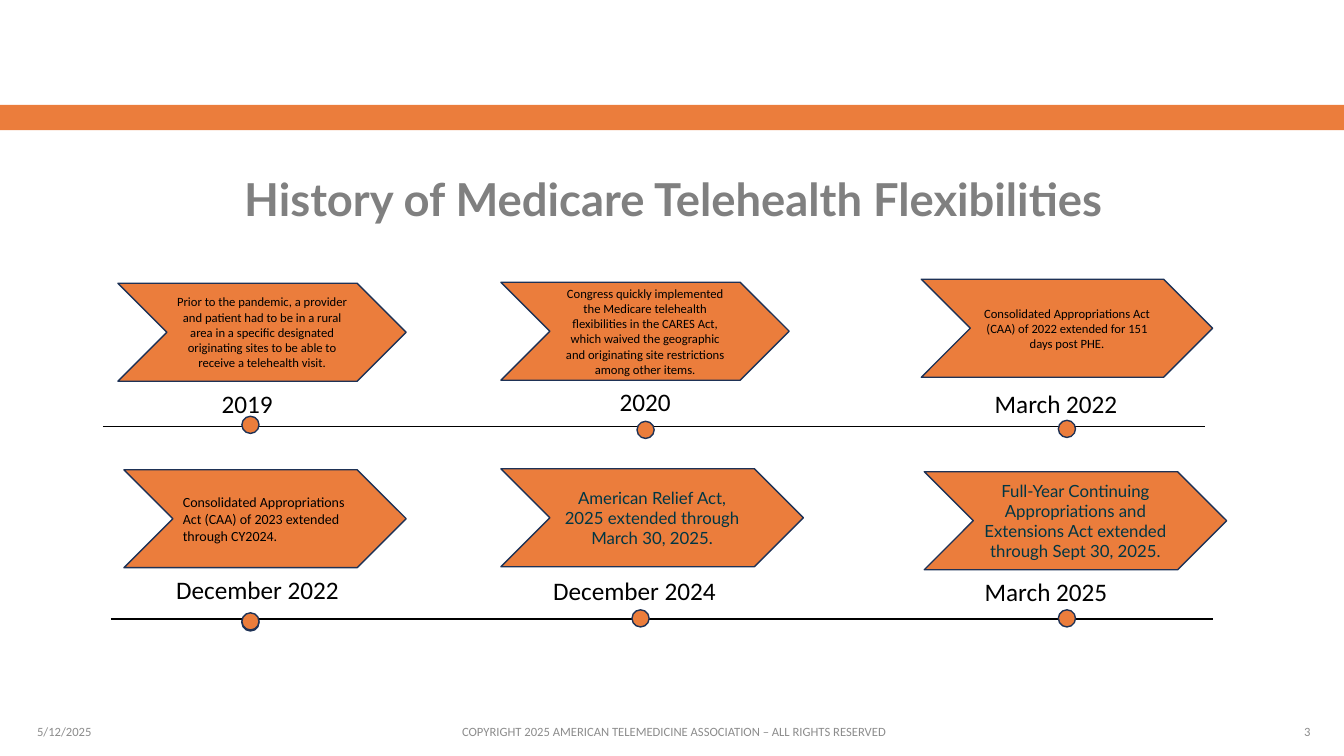
from dataclasses import dataclass

from lxml import etree
from pptx import Presentation
from pptx.dml.color import RGBColor
from pptx.enum.shapes import MSO_CONNECTOR, MSO_SHAPE
from pptx.enum.text import MSO_ANCHOR, PP_ALIGN
from pptx.oxml.ns import qn
from pptx.util import Pt

LEFT, CENTER, RIGHT = PP_ALIGN.LEFT, PP_ALIGN.CENTER, PP_ALIGN.RIGHT
TOP, MIDDLE, BOTTOM = MSO_ANCHOR.TOP, MSO_ANCHOR.MIDDLE, MSO_ANCHOR.BOTTOM
RECTANGLE, CHEVRON, OVAL = MSO_SHAPE.RECTANGLE, MSO_SHAPE.CHEVRON, MSO_SHAPE.OVAL
STRAIGHT = MSO_CONNECTOR.STRAIGHT


@dataclass(frozen=True)
class Theme:
    orange: str = "EB7D3C"
    navy: str = "1E3256"
    teal: str = "003644"
    black: str = "000000"
    title_gray: str = "808080"
    footer_gray: str = "8C8C8C"
    body_font: str = "Calibri"
    accent_font: str = "Lato"
    title_size: float = 32.4
    date_size: float = 18
    large_size: float = 12
    medium_size: float = 10
    small_size: float = 9
    chevron_height: float = 70
    dot_size: float = 12.24
    label_height: float = 28.8


THEME = Theme()
SLIDE_WIDTH, SLIDE_HEIGHT = 960, 540

SMALL = dict(size=THEME.small_size, align=CENTER)
MEDIUM = dict(size=THEME.medium_size, spacing=Pt(12))
LARGE = dict(size=THEME.large_size, align=CENTER, font=THEME.accent_font, color=THEME.teal)


@dataclass(frozen=True)
class Milestone:
    """Places are (left, top[, width]) from the start of the timeline."""
    date: str
    event: str
    event_format: dict
    chevron: tuple
    label: tuple
    dots: tuple
    date_align: PP_ALIGN = LEFT


EARLY_MILESTONES = [
    Milestone("2019",
              "Prior to the pandemic, a provider and patient had to be in a rural area in a "
              "specific designated originating sites to be able to receive a telehealth visit.",
              SMALL, (10.8, -102.24, 205.92), (77.76, -30.96, 55.44), ((99.36, -7.2),)),
    Milestone("2020",
              "Congress quickly implemented the Medicare telehealth flexibilities in the CARES "
              "Act, which waived the geographic and originating site restrictions among other "
              "items.",
              SMALL, (284.4, -102.96, 205.92), (336.96, -32.4, 100.8), ((381.6, -3.6),), CENTER),
    Milestone("March 2022",
              "Consolidated Appropriations Act (CAA) of 2022 extended for 151 days post PHE.",
              SMALL, (584.64, -105.12, 208.08), (630, -30.96, 136.8), ((682.56, -4.32),)),
]
LATE_MILESTONES = [
    Milestone("December 2022",
              "Consolidated Appropriations Act (CAA) of 2023 extended through CY2024.",
              MEDIUM, (9.36, -106.56, 201.6), (39.6, -35.28, 144),
              ((93.6, -3.6), (93.6, -4.32))),
    Milestone("December 2024",
              "American Relief Act, 2025 extended through March 30, 2025.",
              LARGE, (278.64, -107.28, 216), (308.88, -34.56, 144), ((372.24, -6.48),)),
    Milestone("March 2025",
              "Full-Year Continuing Appropriations and Extensions Act extended through "
              "Sept 30, 2025.",
              LARGE, (581.04, -105.12, 216), (617.04, -33.84, 144), ((676.8, -6.48),)),
]


def write_text(shape, text, *, size, font=THEME.body_font, color=THEME.black, bold=False,
               align=LEFT, anchor=MIDDLE, spacing=None):
    frame = shape.text_frame
    frame.word_wrap = True
    frame.vertical_anchor = anchor
    paragraph = frame.paragraphs[0]
    paragraph.alignment = align
    if spacing is not None:
        paragraph.line_spacing = spacing
    run = paragraph.add_run()
    run.text = text
    run.font.name = font
    run.font.size = Pt(size)
    run.font.bold = bold
    run.font.color.rgb = RGBColor.from_string(color)


def add_textbox(slide, box, text, **text_format):
    textbox = slide.shapes.add_textbox(*map(Pt, box))
    write_text(textbox, text, **text_format)


def add_orange_shape(slide, preset, box, outlined=True):
    shape = slide.shapes.add_shape(preset, *map(Pt, box))
    shape.shadow.inherit = False
    shape.fill.solid()
    shape.fill.fore_color.rgb = RGBColor.from_string(THEME.orange)
    if outlined:
        shape.line.color.rgb = RGBColor.from_string(THEME.navy)
        shape.line.width = Pt(1)
    else:
        shape.line.fill.background()
    return shape


def add_header(slide, box):
    """Orange band at the top of the box, title at its bottom."""
    left, top, width, height = box
    add_orange_shape(slide, RECTANGLE, (left, top, width, 18), outlined=False)
    title_height = 28.8
    add_textbox(slide, (left + 67.68, top + height - title_height, 826.56, title_height),
                "History of Medicare Telehealth Flexibilities",
                size=THEME.title_size, font=THEME.accent_font, color=THEME.title_gray,
                bold=True, align=CENTER, anchor=BOTTOM, spacing=0.9)


def add_timeline(slide, start, width, milestones):
    left, top = start
    # Axis
    axis = slide.shapes.add_connector(STRAIGHT, Pt(left), Pt(top), Pt(left + width), Pt(top))
    axis.line.color.rgb = RGBColor.from_string(THEME.black)
    axis.line.width = Pt(1)
    etree.SubElement(axis._element.spPr, qn("a:effectLst"))

    for milestone in milestones:
        # Event chevron
        x, y, chevron_width = milestone.chevron
        chevron = add_orange_shape(
            slide, CHEVRON, (left + x, top + y, chevron_width, THEME.chevron_height))
        write_text(chevron, milestone.event, **milestone.event_format)
        # Date
        x, y, label_width = milestone.label
        add_textbox(slide, (left + x, top + y, label_width, THEME.label_height),
                    milestone.date, size=THEME.date_size, align=milestone.date_align, anchor=TOP)
        # Markers on the axis
        for x, y in milestone.dots:
            add_orange_shape(slide, OVAL, (left + x, top + y, THEME.dot_size, THEME.dot_size))


def add_footer(slide, box):
    left, top, width, height = box
    side = 216
    middle = width - 2 * side
    parts = [
        (0, side, "5/12/2025", LEFT),
        (side, middle,
         "COPYRIGHT 2025 AMERICAN TELEMEDICINE ASSOCIATION – ALL RIGHTS RESERVED", CENTER),
        (side + middle, side, "3", RIGHT),
    ]
    for offset, part_width, text, align in parts:
        add_textbox(slide, (left + offset, top, part_width, height), text,
                    size=THEME.small_size, color=THEME.footer_gray, align=align)


def main():
    presentation = Presentation()
    presentation.slide_width = Pt(SLIDE_WIDTH)
    presentation.slide_height = Pt(SLIDE_HEIGHT)
    slide = presentation.slides.add_slide(presentation.slide_layouts[6])

    add_header(slide, (0, 74.88, SLIDE_WIDTH, 90))
    add_timeline(slide, (73.44, 304.56), 787.4, EARLY_MILESTONES)
    add_timeline(slide, (79.2, 442.08), 787.4, LATE_MILESTONES)
    add_footer(slide, (19.44, 508.32, 923.76, 28.8))

    presentation.save("out.pptx")


if __name__ == "__main__":
    main()
